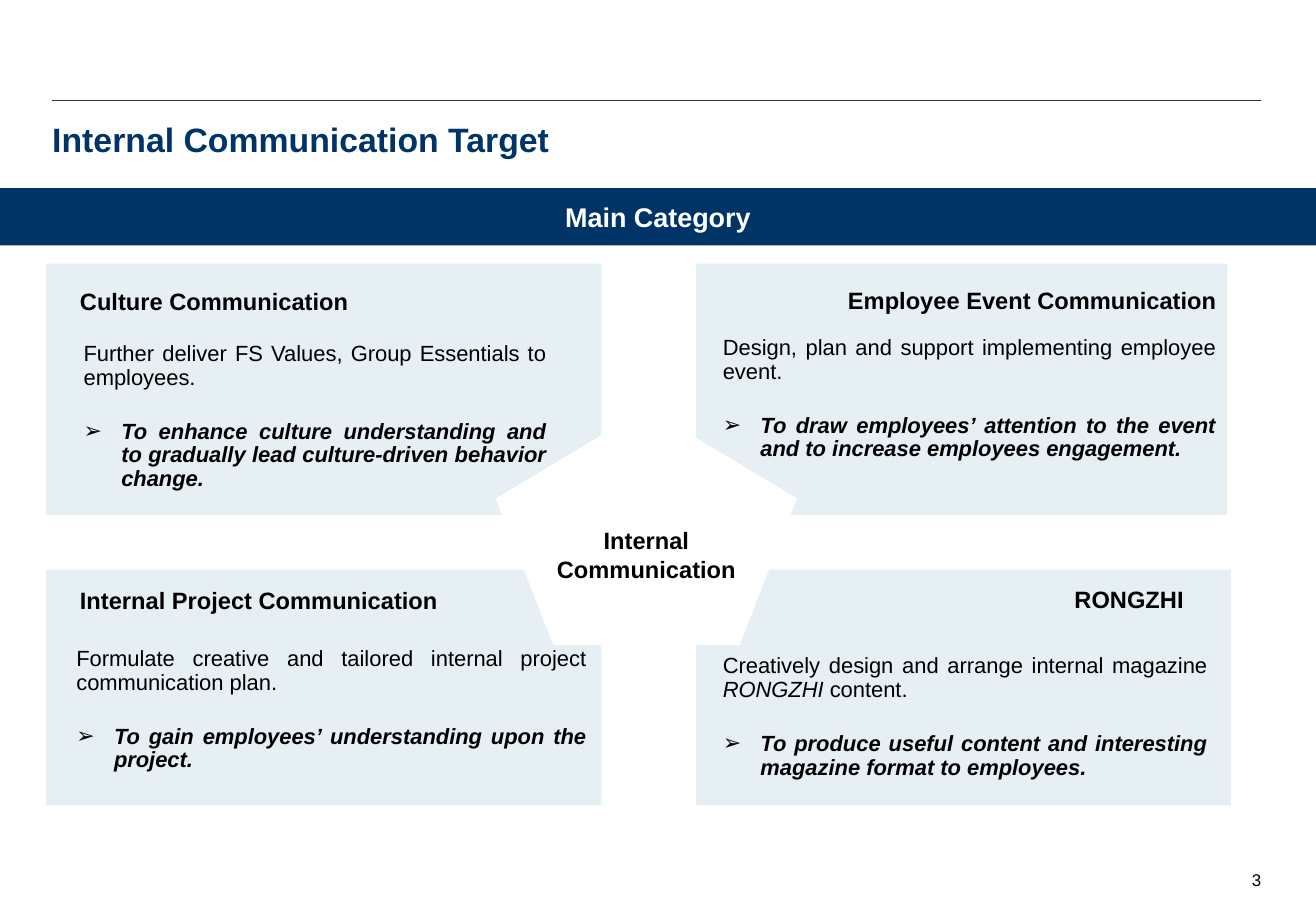
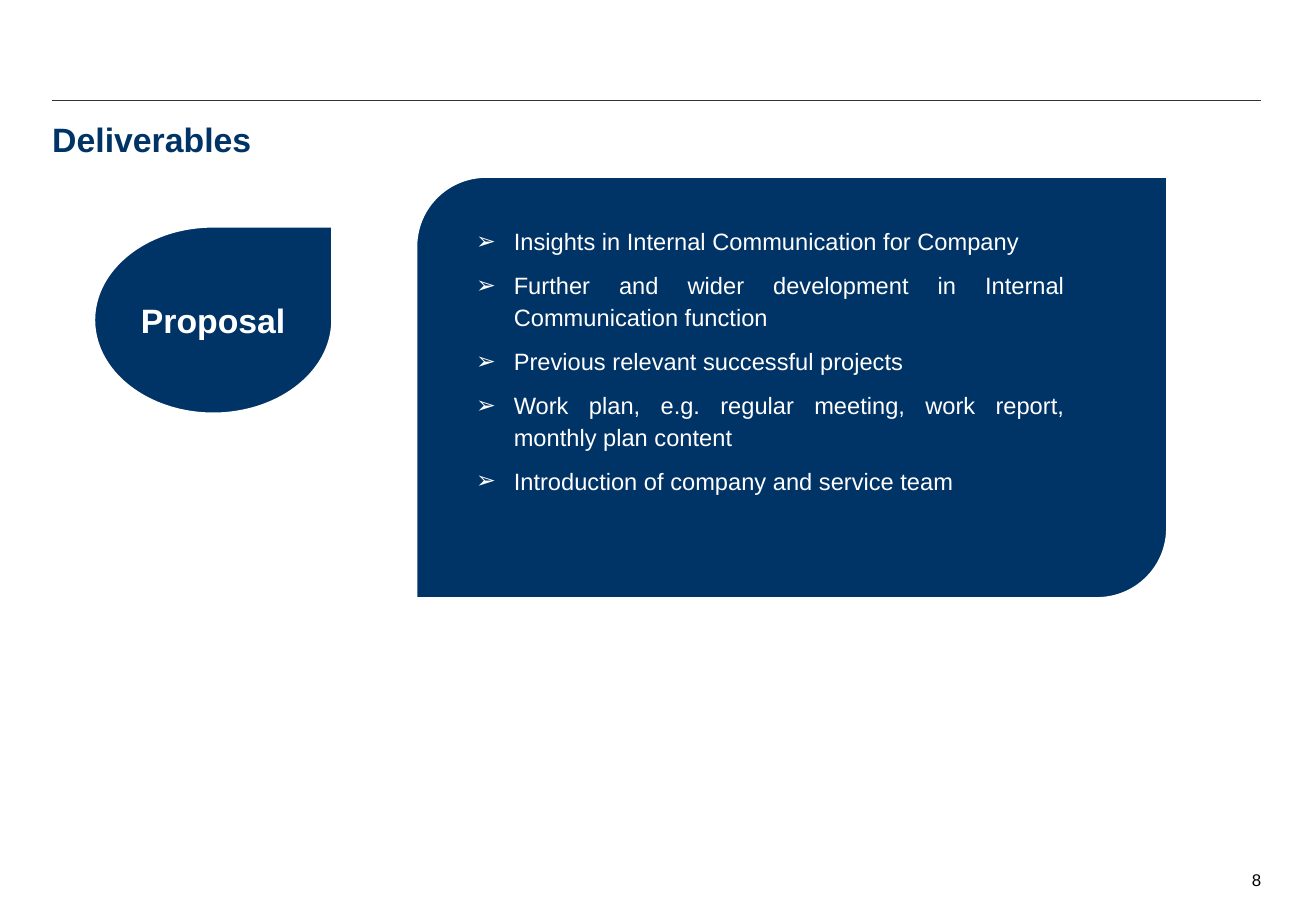
from pptx import Presentation
from pptx import util as u
from pptx.dml.color import RGBColor
from pptx.enum import shapes, text
from pptx.oxml.ns import qn
from lxml import etree

# Shared style
FACE = "Arial"
NAVY, PALE, WHITE, BLACK, GREY = "003366", "E6EFF4", "FFFFFF", "000000", "333333"
LEFT, RIGHT = 0.43, 10.38
KIND, ALIGN = shapes.MSO_SHAPE, text.PP_ALIGN
MID, TOP = text.MSO_ANCHOR.MIDDLE, text.MSO_ANCHOR.TOP

# Text formats
HEAD = {"size": 14, "bold": True, "color": BLACK}
BODY = {"size": 13, "color": BLACK}
GOAL = {**BODY, "bold": True, "italic": True}
LABEL = {"size": 20, "bold": True, "color": WHITE}
NOTE = {"size": 10, "color": BLACK}
ITEM = {"size": 14, "color": WHITE}

# Paragraph formats
TIGHT = {"line_spacing": 0.9}
JUST = {"alignment": ALIGN.JUSTIFY, **TIGHT}
LOOSE = {"alignment": ALIGN.JUSTIFY, "line_spacing": u.Pt(19)}


def color(code):
    return RGBColor.from_string(code)


def assign(target, values):
    for name, value in values.items():
        setattr(target, name, value)


def style(font, look):
    values = dict(look)
    font.color.rgb = color(values.pop("color"))
    assign(font, {**values, "name": FACE, "size": u.Pt(look["size"])})


def place(shape, box):
    names = ("left", "top", "width", "height")
    assign(shape, dict(zip(names, map(u.Inches, box))))


def setup(frame, pad=(0, 0), anchor=TOP):
    wide, high = map(u.Inches, pad)
    assign(frame, {"word_wrap": True, "vertical_anchor": anchor,
                   "margin_left": wide, "margin_right": wide,
                   "margin_top": high, "margin_bottom": high})


def bullet(para, left):
    props = para._p.get_or_add_pPr()
    props.set("marL", str(u.Inches(left)))
    props.set("indent", str(u.Inches(-0.31)))
    etree.SubElement(props, qn("a:buFont")).set("typeface", FACE)
    etree.SubElement(props, qn("a:buChar")).set("char", "➢")


def write(frame, words, look, form, mark=None):
    """Fill the next paragraph; words between * signs are italic."""
    para = frame.paragraphs[0]
    if para.runs:
        para = frame.add_paragraph()
    if mark:
        bullet(para, mark)
    assign(para, form)
    style(para.font, look)
    for i, part in enumerate(words.split("*")):
        run = para.add_run()
        run.text = part
        style(run.font, {**look, "italic": True} if i % 2 else look)


def textbox(slide, box, pad=(0.1, 0.05)):
    frame = slide.shapes.add_textbox(*map(u.Inches, box)).text_frame
    setup(frame, pad)
    return frame


def block(slide, kind, box, fill, edge=None, words="", look=None):
    shape = slide.shapes.add_shape(kind, *map(u.Inches, box))
    shape.shadow.inherit = False
    shape.fill.solid()
    shape.fill.fore_color.rgb = color(fill)
    if edge:
        shape.line.color.rgb = color(edge)
        shape.line.width = u.Pt(2)
    else:
        shape.line.fill.background()
    if words:
        setup(shape.text_frame, anchor=MID)
        write(shape.text_frame, words, look, {"alignment": ALIGN.CENTER})


def rule(slide):
    y = u.Inches(0.83)
    line = slide.shapes.add_connector(shapes.MSO_CONNECTOR.STRAIGHT,
                                      u.Inches(LEFT), y, u.Inches(RIGHT), y)
    line.line.color.rgb = color(GREY)
    line.line.width = u.Pt(0.75)
    etree.SubElement(line._element.spPr, qn("a:effectLst"))


def start(deck, name, page):
    """Add a slide with its rule, title and page number."""
    slide = deck.slides.add_slide(deck.slide_layouts[5])
    rule(slide)
    title = slide.shapes.title
    place(title, (LEFT, 0.98, RIGHT - LEFT, 0.75))
    setup(title.text_frame)
    write(title.text_frame, name, {**LABEL, "color": NAVY},
          {"alignment": ALIGN.LEFT})
    frame = textbox(slide, (RIGHT - 0.8, 7.16, 0.8, 0.2), (0, 0))
    write(frame, page, NOTE, {"alignment": ALIGN.RIGHT})
    return slide


def panel(slide, box, head, side, spot, words, goal, area):
    block(slide, KIND.RECTANGLE, box, PALE)
    write(textbox(slide, spot), head, HEAD, {"alignment": side, **TIGHT})
    frame = textbox(slide, area)
    write(frame, words, BODY, {**JUST, "space_after": u.Pt(18)})
    write(frame, goal, GOAL, JUST, 0.31)


def target(deck):
    slide = start(deck, "Internal Communication Target", "3")
    # Four category panels
    west, east, upper, lower = 0.38, 5.73, 2.17, 4.69
    panel(slide, (west, upper, 4.57, 2.07),
          "Culture Communication", ALIGN.LEFT, (0.56, 2.34, 3.83, 0.37),
          "Further deliver FS Values, Group Essentials to employees.",
          "To enhance culture understanding and to gradually lead "
          "culture-driven behavior change.", (0.59, 2.77, 4, 1.35))
    panel(slide, (east, upper, 4.37, 2.07),
          "Employee Event Communication", ALIGN.RIGHT, (6.12, 2.33, 3.99, 0.31),
          "Design, plan and support implementing employee event.",
          "To draw employees’ attention to the event and to increase "
          "employees engagement.", (5.85, 2.72, 4.25, 1.15))
    panel(slide, (west, lower, 4.57, 1.94),
          "Internal Project Communication", ALIGN.LEFT, (0.56, 4.8, 3.66, 0.31),
          "Formulate creative and tailored internal project communication plan.",
          "To gain employees’ understanding upon the project.",
          (0.53, 5.28, 4.39, 1.15))
    panel(slide, (east, lower, 4.4, 1.94),
          "RONGZHI", ALIGN.RIGHT, (8.47, 4.79, 1.37, 0.3),
          "Creatively design and arrange internal magazine *RONGZHI* content.",
          "To produce useful content and interesting magazine format "
          "to employees.", (5.85, 5.34, 4.18, 1.15))
    # Band and centre
    block(slide, KIND.RECTANGLE, (0, 1.55, 10.83, 0.47), NAVY,
          words="Main Category", look={**LABEL, "size": 16})
    block(slide, KIND.REGULAR_PENTAGON, (4.08, 3.36, 2.48, 1.95), WHITE,
          words="Internal Communication", look=HEAD)


def deliver(deck):
    slide = start(deck, "Deliverables", "8")
    block(slide, KIND.ROUND_2_DIAG_RECTANGLE, (3.42, 1.45, 6.19, 3.48),
          NAVY, WHITE)
    block(slide, KIND.TEAR, (0.77, 1.86, 1.97, 1.55), NAVY, WHITE,
          "Proposal", LABEL)
    # Proposal contents
    frame = textbox(slide, (2.98, 1.79, 5.88, 2.44))
    items = ("Insights in Internal Communication for Company",
             "Further and wider development in Internal Communication function",
             "Previous relevant successful projects",
             "Work plan, e.g. regular meeting, work report, monthly plan content",
             "Introduction of company and service team")
    for i, item in enumerate(items):
        write(frame, item, ITEM,
              {**LOOSE, "space_before": u.Pt(7 if i else 0)}, 1.15)


def main():
    deck = Presentation()
    assign(deck, {"slide_width": u.Inches(10.83),
                  "slide_height": u.Inches(7.5)})
    target(deck)
    deliver(deck)
    deck.save("out.pptx")


if __name__ == "__main__":
    main()
